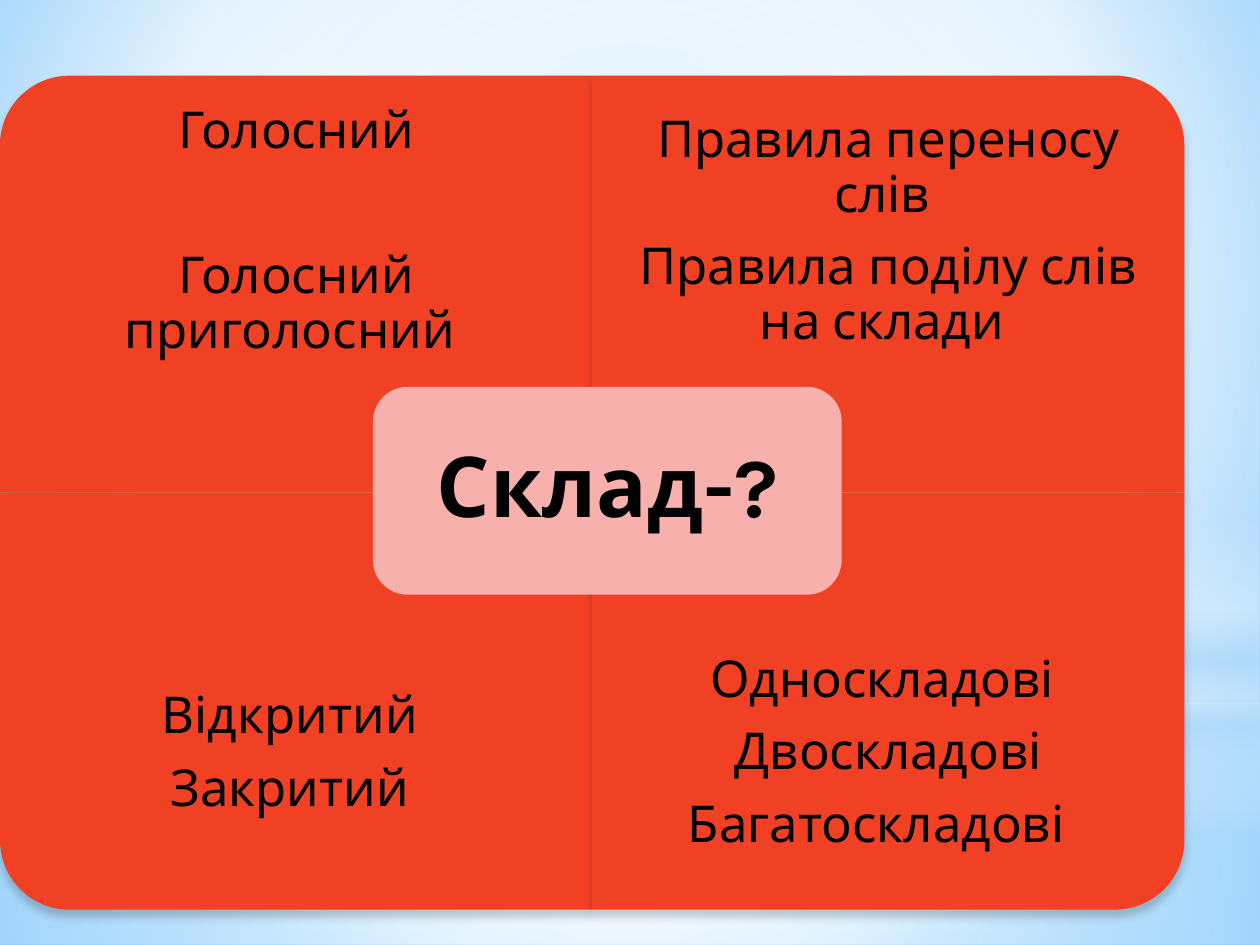
from pptx import Presentation
from pptx.dml.color import RGBColor
from pptx.enum.shapes import MSO_SHAPE
from pptx.enum.text import MSO_ANCHOR, PP_ALIGN
from pptx.oxml import parse_xml
from pptx.oxml.ns import nsdecls, qn
from pptx.util import Inches, Pt

RECTANGLE = MSO_SHAPE.RECTANGLE
OVAL = MSO_SHAPE.OVAL
ROUND_ONE = MSO_SHAPE.ROUND_1_RECTANGLE
ROUNDED = MSO_SHAPE.ROUNDED_RECTANGLE
MIDDLE = MSO_ANCHOR.MIDDLE
CENTER = PP_ALIGN.CENTER

RED = RGBColor(0xF1, 0x41, 0x24)
PINK = RGBColor(0xF7, 0xB0, 0xAC)
BLACK = RGBColor(0x00, 0x00, 0x00)
WHITE = RGBColor(0xFF, 0xFF, 0xFF)
PALE_BLUE = RGBColor(0xB4, 0xDC, 0xFA)
SKY = RGBColor(0x9E, 0xD5, 0xFF)
DEEP_SKY = RGBColor(0x5B, 0xB9, 0xFF)

FONT = "Karla"
CENTERED = (50, 50, 50, 50)
SPACING_RATIO = 0.35
WIDE_GAP = 51.4
TILE_WIDTH, TILE_HEIGHT = 4.7, 3.31
TILE_TOP = 0.6
TEXT_HEIGHT = 2.48

GLOWS = [
    (RECTANGLE, (0, 5.58, 10, 1.92), [(0, WHITE, 91), (37, WHITE, 76), (100, PALE_BLUE, 79)], CENTERED),
    (RECTANGLE, (0, 0, 10, 5.58), [(0, WHITE, 89), (48, WHITE, 62), (100, PALE_BLUE, 79)], CENTERED),
    (RECTANGLE, (0, 4.12, 10, 2.5), [(0, WHITE, 0), (29, WHITE, 30), (45, PALE_BLUE, 40),
                                    (55, WHITE, 26), (65, PALE_BLUE, 60), (100, WHITE, 0)], None),
    (OVAL, (0, 1.75, 10, 5.58), [(0, WHITE, 100), (56, WHITE, 0)], CENTERED),
]

QUADRANTS = [
    (0, 0, 270, ["Голосний", "Голосний приголосний "], WIDE_GAP),
    (1, 0, 0, ["Правила переносу слів ", "Правила поділу слів на склади "], None),
    (0, 1, 180, ["Відкритий ", "Закритий "], None),
    (1, 1, 90, ["Односкладові ", "Двоскладові", "Багатоскладові  "], None),
]


class SlideBuilder:
    """Holds the text style and the slide that elements are added to."""

    def __init__(self, slide):
        self.slide = slide
        self.font = {"name": FONT, "size": Pt(29), "bold": False}
        self.paragraph = {"alignment": CENTER, "line_spacing": 0.9}

    def gradient(self, owner, element, stops, focus):
        owner.fill.gradient()
        stop_list = "".join(
            f'<a:gs pos="{position * 1000}"><a:srgbClr val="{color}">'
            f'<a:alpha val="{alpha * 1000}"/></a:srgbClr></a:gs>'
            for position, color, alpha in stops)
        direction = '<a:lin ang="5400000" scaled="0"/>'
        if focus:
            sides = " ".join(f'{side}="{value * 1000}"' for side, value in zip("ltrb", focus))
            direction = f'<a:path path="circle"><a:fillToRect {sides}/></a:path>'
        gradient = parse_xml(f'<a:gradFill {nsdecls("a")} rotWithShape="1">'
                             f'<a:gsLst>{stop_list}</a:gsLst>{direction}</a:gradFill>')
        default = element.find(".//" + qn("a:gradFill"))
        default.getparent().replace(default, gradient)

    def background(self, stops, focus):
        self.gradient(self.slide.background, self.slide.element, stops, focus)

    def shape(self, kind, box, color=None):
        shape = self.slide.shapes.add_shape(kind, *map(Inches, box))
        shape.shadow.inherit = False
        shape.line.fill.background()
        if color is not None:
            shape.fill.solid()
            shape.fill.fore_color.rgb = color
        return shape

    def glow(self, kind, box, stops, focus):
        shape = self.shape(kind, box)
        self.gradient(shape, shape.element, stops, focus)

    def tile(self, center_x, center_y, rotation):
        width, height = TILE_WIDTH, TILE_HEIGHT
        if rotation % 180:
            width, height = height, width
        box = (center_x - width / 2, center_y - height / 2, width, height)
        shape = self.shape(ROUND_ONE, box, RED)
        shape.rotation = rotation
        shape.element.find(".//" + qn("a:effectLst")).append(parse_xml(
            f'<a:outerShdw {nsdecls("a")} blurRad="{Pt(5)}" dist="{Pt(4)}" dir="5400000" '
            'rotWithShape="0"><a:srgbClr val="000000"><a:alpha val="20000"/>'
            '</a:srgbClr></a:outerShdw>'))

    def text(self, box, lines, inset, gap=None, **changes):
        frame = self.slide.shapes.add_textbox(*map(Inches, box)).text_frame
        frame_format = {"word_wrap": True, "vertical_anchor": MIDDLE}
        frame_format.update({f"margin_{side}": Inches(inset)
                             for side in ("left", "top", "right", "bottom")})
        for name, value in frame_format.items():
            setattr(frame, name, value)
        font_format = {**self.font, **changes}
        default_gap = font_format["size"].pt * SPACING_RATIO
        for index, line in enumerate(lines):
            paragraph = frame.add_paragraph() if index else frame.paragraphs[0]
            space = gap if gap and index == 0 else default_gap
            for name, value in {**self.paragraph, "space_after": Pt(space)}.items():
                setattr(paragraph, name, value)
            run = paragraph.add_run()
            run.text = line
            for name, value in font_format.items():
                setattr(run.font, name, value)
            run.font.color.rgb = BLACK


def main():
    presentation = Presentation()
    presentation.slide_width = Inches(10)
    presentation.slide_height = Inches(7.5)
    builder = SlideBuilder(presentation.slides.add_slide(presentation.slide_layouts[6]))

    builder.background([(0, SKY, 100), (60, WHITE, 100), (100, DEEP_SKY, 100)], (20, 10, 20, 60))
    for glow in GLOWS:
        builder.glow(*glow)

    for column, row, rotation, lines, gap in QUADRANTS:
        left = column * TILE_WIDTH
        top = TILE_TOP + row * TILE_HEIGHT
        builder.tile(left + TILE_WIDTH / 2, top + TILE_HEIGHT / 2, rotation)
        text_top = top + row * (TILE_HEIGHT - TEXT_HEIGHT)
        builder.text((left, text_top, TILE_WIDTH, TEXT_HEIGHT), lines, 0.23, gap)

    builder.shape(ROUNDED, (2.96, 3.07, 3.72, 1.65), PINK)
    builder.text((3.04, 3.15, 3.56, 1.49), ["Склад-?"], 0.2, size=Pt(48), bold=True)
    presentation.save("out.pptx")


if __name__ == "__main__":
    main()
